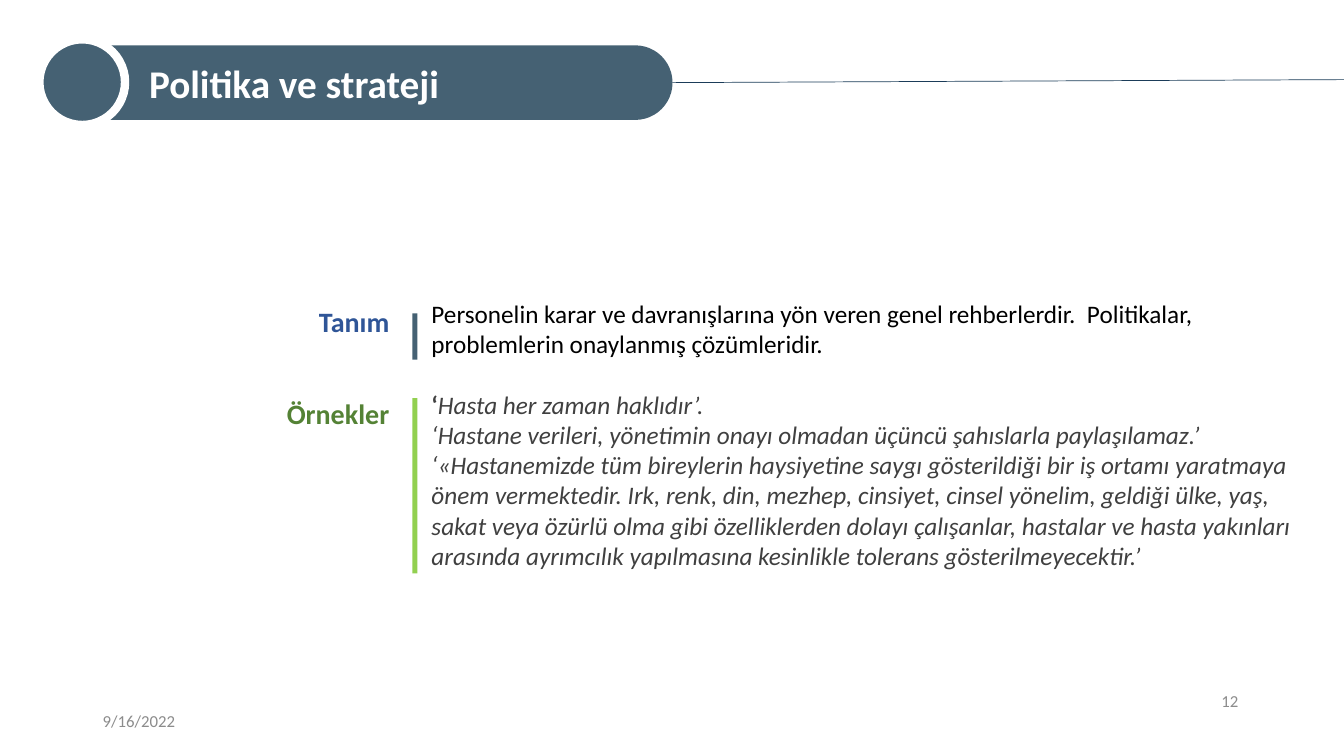
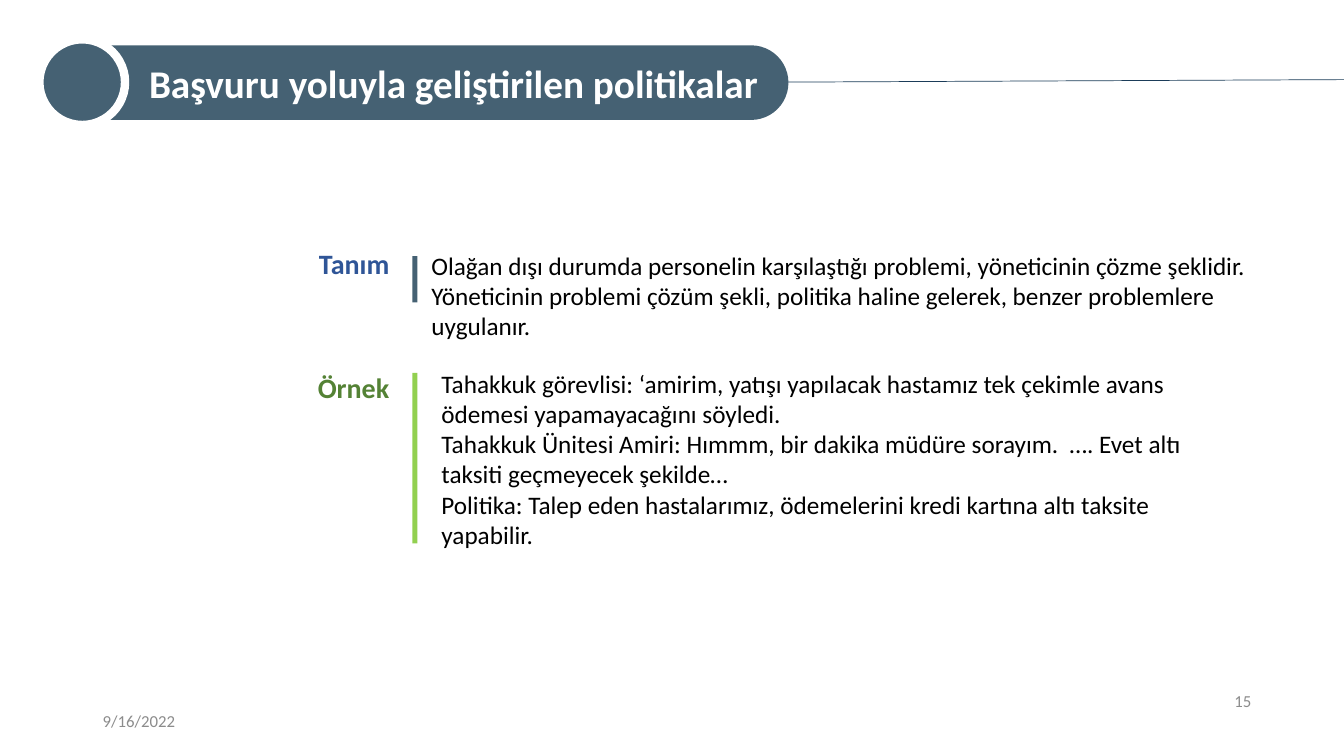
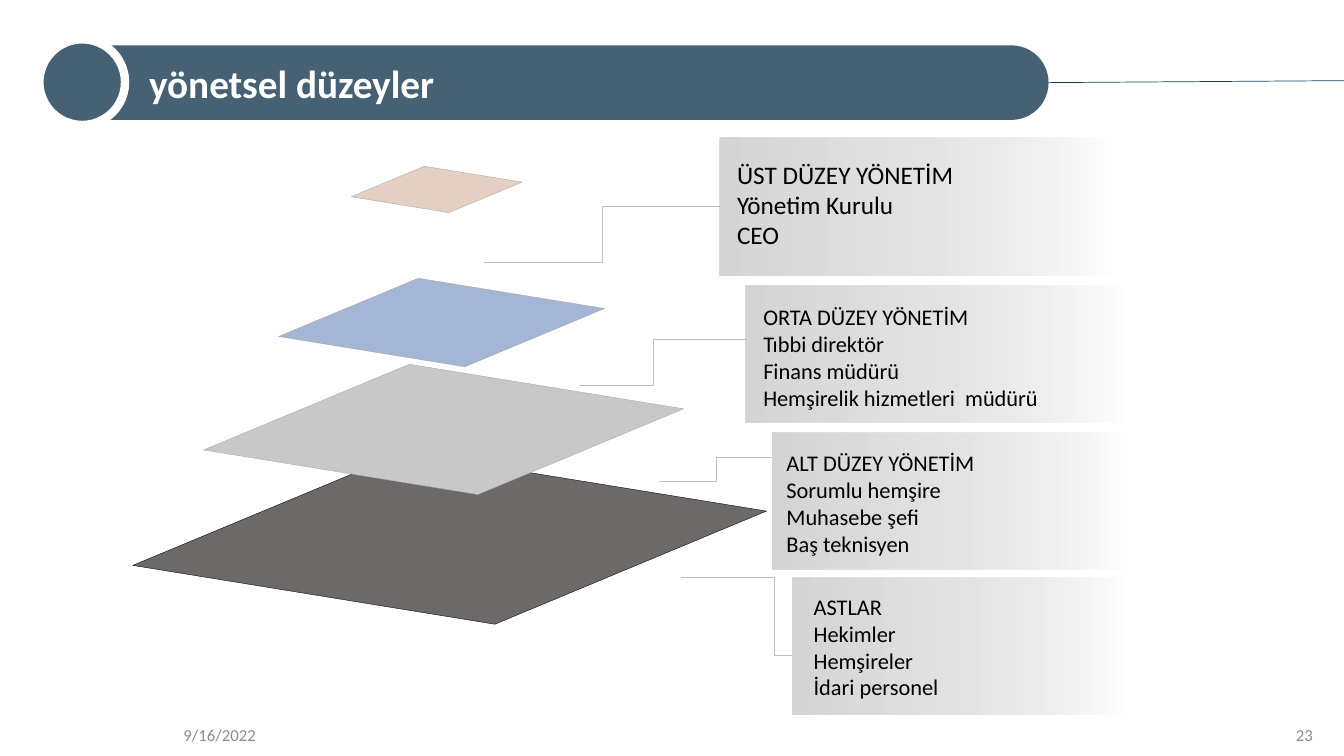
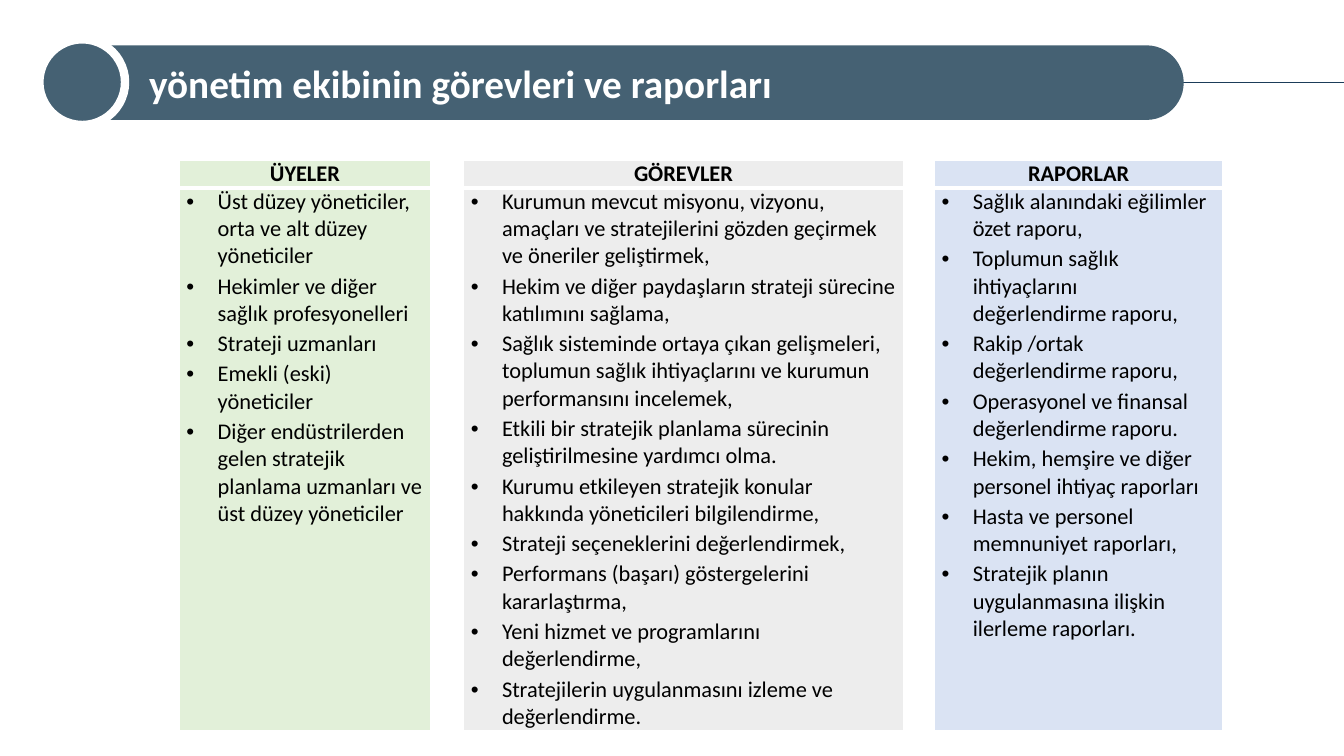
from lxml.etree import SubElement
from pptx import Presentation
from pptx.dml.color import RGBColor
from pptx.enum.shapes import MSO_CONNECTOR as LINK, MSO_SHAPE as SHAPE
from pptx.enum.text import MSO_ANCHOR as ANCHOR, PP_ALIGN as ALIGN
from pptx.oxml.ns import qn
from pptx.util import Inches, Pt

COLORS = {
    "slate": "456173", "navy": "1B3C59", "white": "FFFFFF", "black": "000000",
    "footer": "8C8C8C", "text_grey": "404040", "link": "BFBFBF",
    "blue_label": "2F5597", "green_label": "548235", "lime": "92D050",
    "top": "E4D0C3", "middle": "A5B5D5", "lower": "C8C8C8", "staff": "6D6969",
    "edge": "808080", "fade": "A6A6A6",
    "members": "E2F0D9", "duties": "EDEDED", "reports": "DAE3F3",
}


def write(frame, lines, size=18, color="black", bold=False, italic=False, align=None,
          anchor=None, inset=None, before=None, after=None, bullet=None, join=False):
    """Add lines as paragraphs; with join, continue the last paragraph."""
    frame.word_wrap = True
    if anchor is not None:
        frame.vertical_anchor = anchor
    if inset is not None:
        (frame.margin_left, frame.margin_top,
         frame.margin_right, frame.margin_bottom) = map(Inches, inset)
    for line in lines:
        para = frame.paragraphs[-1]
        if para.text and not join:
            para = frame.add_paragraph()
        if align is not None:
            para.alignment = align
        if before is not None:
            para.space_before = Pt(before)
        if after is not None:
            para.space_after = Pt(after)
        if bullet:
            props = para._p.get_or_add_pPr()
            props.set("marL", str(Inches(0.31)))
            props.set("indent", str(Inches(-0.31)))
            SubElement(props, qn("a:buFont"), typeface="Arial")
            SubElement(props, qn("a:buChar"), char=bullet)
        span = para.add_run()
        span.text = line
        span.font.name = "Calibri"
        span.font.size = Pt(size)
        span.font.bold = bold
        span.font.italic = italic
        span.font.color.rgb = RGBColor.from_string(COLORS[color])


def block(page, kind, at, fill):
    """Add a filled preset shape without line or shadow."""
    shape = page.shapes.add_shape(kind, *map(Inches, at))
    shape.shadow.inherit = False
    shape.fill.solid()
    shape.fill.fore_color.rgb = RGBColor.from_string(COLORS[fill])
    shape.line.fill.background()
    return shape


deck = Presentation()
deck.slide_width, deck.slide_height = Inches(13.33), Inches(7.5)

# Header and footer: title, bar width, rule start, rule end height,
# date position, number, number position
HEADERS = [
    ("Politika ve strateji", 6.28, 6.67, 0.79, (0.92, 6.95), "12", (9.38, 6.75)),
    ("Başvuru yoluyla geliştirilen politikalar", 7.43, 6.67, 0.79,
     (0.92, 6.95), "15", (9.51, 6.75)),
    ("yönetsel düzeyler", 10.01, 10.4, 0.8, (1.72, 7.09), "23", (10.12, 7.09)),
    ("yönetim ekibinin görevleri ve raporları", 11.35, 11.73, 0.82, None, None, None),
]
pages = []
for title, bar_width, rule_start, rule_end, date_at, number, number_at in HEADERS:
    page = deck.slides.add_slide(deck.slide_layouts[6])
    pages.append(page)
    rule = page.shapes.add_connector(LINK.STRAIGHT, Inches(rule_start), Inches(0.82),
                                     Inches(13.33), Inches(rule_end))
    rule.line.color.rgb = RGBColor.from_string(COLORS["navy"])
    rule.line.width = Pt(0.5)
    bar = block(page, SHAPE.ROUNDED_RECTANGLE, (0.39, 0.45, bar_width, 0.74), "slate")
    bar.adjustments[0] = 0.5
    write(bar.text_frame, [title], size=28, color="white", bold=True, align=ALIGN.LEFT,
          anchor=ANCHOR.MIDDLE, inset=(0.98, 0.05, 0, 0.05))
    knob = block(page, SHAPE.OVAL, (0.39, 0.39, 0.85, 0.85), "slate")
    knob.line.color.rgb = RGBColor.from_string(COLORS["white"])
    knob.line.width = Pt(6)
    if number:
        for text, place, align in (("9/16/2022", date_at, ALIGN.LEFT),
                                   (number, number_at, ALIGN.RIGHT)):
            box = page.shapes.add_textbox(*map(Inches, (*place, 3, 0.4)))
            write(box.text_frame, [text], size=12, color="footer", align=align,
                  anchor=ANCHOR.MIDDLE)
policy, requests, levels, team = pages

# Definition and example labels with their upright bars
LABELS = [
    (policy, "Tanım", 2.97, "blue_label", 3.11, 0.46, "slate"),
    (policy, "Örnekler", 3.88, "green_label", 3.95, 1.74, "lime"),
    (requests, "Tanım", 2.4, "blue_label", 2.54, 0.46, "slate"),
    (requests, "Örnek", 3.63, "green_label", 3.7, 1.69, "lime"),
]
for page, label, label_top, label_color, bar_top, bar_height, bar_color in LABELS:
    box = page.shapes.add_textbox(*map(Inches, (2.74, label_top, 1.22, 0.44)))
    write(box.text_frame, [label], size=20, color=label_color, bold=True, align=ALIGN.RIGHT)
    block(page, SHAPE.RECTANGLE, (4.09, bar_top, 0.05, bar_height), bar_color)

# Slide 1: policy and strategy
frame = policy.shapes.add_textbox(*map(Inches, (4.28, 2.96, 8.7, 2.73))).text_frame
write(frame, ["Personelin karar ve davranışlarına yön veren genel rehberlerdir.  Politikalar, "
              "problemlerin onaylanmış çözümleridir."], inset=(0, 0, 0, 0))
write(frame, ["‘"], color="text_grey", bold=True, before=21.6)
write(frame, ["Hasta her zaman haklıdır’."], color="text_grey", italic=True, join=True)
write(frame, [
    "‘Hastane verileri, yönetimin onayı olmadan üçüncü şahıslarla paylaşılamaz.’",
    "‘«Hastanemizde tüm bireylerin haysiyetine saygı gösterildiği bir iş ortamı yaratmaya "
    "önem vermektedir. Irk, renk, din, mezhep, cinsiyet, cinsel yönelim, geldiği ülke, yaş, "
    "sakat veya özürlü olma gibi özelliklerden dolayı çalışanlar, hastalar ve hasta yakınları "
    "arasında ayrımcılık yapılmasına kesinlikle tolerans gösterilmeyecektir.’",
], color="text_grey", italic=True)

# Slide 2: policies developed on request
box = requests.shapes.add_textbox(*map(Inches, (4.28, 2.48, 8.47, 0.91)))
write(box.text_frame, [
    "Olağan dışı durumda personelin karşılaştığı problemi, yöneticinin çözme şeklidir.  "
    "Yöneticinin problemi çözüm şekli, politika haline gelerek, benzer problemlere uygulanır.",
], inset=(0, 0, 0, 0))
box = requests.shapes.add_textbox(*map(Inches, (4.28, 3.6, 7.91, 2.22)))
write(box.text_frame, [
    "Tahakkuk görevlisi: ‘amirim, yatışı yapılacak hastamız tek çekimle avans ödemesi "
    "yapamayacağını söyledi.",
    "Tahakkuk Ünitesi Amiri: Hımmm, bir dakika müdüre sorayım.  …. Evet altı taksiti "
    "geçmeyecek şekilde…",
    "Politika: Talep eden hastalarımız, ödemelerini kredi kartına altı taksite yapabilir.",
])

# Slide 3: elbow links from the panels to the layers
ELBOWS = [
    ((7.14, 2.05), (4.8, 2.6), 0.5),
    ((7.4, 3.37), (5.75, 3.82), 0.56),
    ((7.66, 4.54), (6.54, 4.78), 0.5),
    ((7.86, 6.5), (6.75, 5.73), 0.16),
]
for start, end, bend in ELBOWS:
    elbow = levels.shapes.add_connector(LINK.ELBOW, *map(Inches, (*start, *end)))
    elbow.line.color.rgb = RGBColor.from_string(COLORS["link"])
    elbow.line.width = Pt(0.5)
    guides = elbow._element.spPr.find(qn("a:prstGeom")).get_or_add_avLst()
    SubElement(guides, qn("a:gd"), name="adj1", fmla=f"val {round(bend * 100000)}")

# Layers: one tilted square, scaled by its side about its centre
TILT = [(-0.7, 0.06), (-0.1, -0.19), (0.7, -0.06), (0.1, 0.19)]
LAYERS = [
    (4.46, 5.34, 4.49, "staff", "black"),
    (4.4, 4.26, 3.4, "lower", "fade"),
    (4.38, 3.2, 2.31, "middle", "fade"),
    (4.33, 1.88, 1.21, "top", "fade"),
]
for center_x, center_y, side, fill, edge in LAYERS:
    corners = [(Inches(center_x + dx * side), Inches(center_y + dy * side)) for dx, dy in TILT]
    outline = levels.shapes.build_freeform(*corners[0])
    outline.add_line_segments(corners[1:], close=True)
    layer = outline.convert_to_shape()
    layer.shadow.inherit = False
    layer.fill.solid()
    layer.fill.fore_color.rgb = RGBColor.from_string(COLORS[fill])
    layer.line.color.rgb = RGBColor.from_string(COLORS[edge])
    layer.line.width = Pt(0.25)

# Panels that fade out to the right: panel place, text place, size, lines
PANELS = [
    ((7.14, 1.37, 3.91), (7.16, 1.48, 3.51, 1.1), 18,
     ["ÜST DÜZEY YÖNETİM", "Yönetim Kurulu", "CEO"]),
    ((7.4, 2.83, 3.76), (7.42, 2.99, 3.22, 1.1), 16,
     ["ORTA DÜZEY YÖNETİM", "Tıbbi direktör", "Finans müdürü",
      "Hemşirelik hizmetleri  müdürü"]),
    ((7.66, 4.29, 3.52), (7.65, 4.44, 3.28, 1.1), 16,
     ["ALT DÜZEY YÖNETİM", "Sorumlu hemşire", "Muhasebe şefi", "Baş teknisyen"]),
    ((7.86, 5.73, 3.31), (7.92, 5.94, 3.1, 0.95), 16,
     ["ASTLAR", "Hekimler", "Hemşireler", "İdari personel"]),
]
STOPS = [(0, "edge", 34), (56, "fade", 29), (100, "edge", 0)]
for panel_at, text_at, size, lines in PANELS:
    panel = block(levels, SHAPE.RECTANGLE, (*panel_at, 1.36), "edge")
    panel.fill.gradient()
    panel.fill.gradient_angle = 0
    stops = panel._element.spPr.find(qn("a:gradFill")).find(qn("a:gsLst"))
    for old in list(stops):
        stops.remove(old)
    for position, color, opacity in STOPS:
        stop = SubElement(stops, qn("a:gs"), pos=str(position * 1000))
        tint = SubElement(stop, qn("a:srgbClr"), val=COLORS[color])
        SubElement(tint, qn("a:alpha"), val=str(opacity * 1000))
    box = levels.shapes.add_textbox(*map(Inches, text_at))
    write(box.text_frame, lines, size=size, anchor=ANCHOR.MIDDLE,
          inset=(0.15, 0.05, 0.15, 0.05))

# Slide 4: table of members, duties and reports, with white spacer columns
COLUMNS = [
    (2.49, "members", "ÜYELER", [
        "Üst düzey yöneticiler, orta ve alt düzey yöneticiler",
        "Hekimler ve diğer sağlık profesyonelleri",
        "Strateji uzmanları",
        "Emekli (eski) yöneticiler",
        "Diğer endüstrilerden gelen stratejik planlama uzmanları ve üst düzey yöneticiler",
    ]),
    (0.33, "white", None, []),
    (4.36, "duties", "GÖREVLER", [
        "Kurumun mevcut misyonu, vizyonu, amaçları ve stratejilerini gözden geçirmek ve "
        "öneriler geliştirmek,",
        "Hekim ve diğer paydaşların strateji sürecine katılımını sağlama,",
        "Sağlık sisteminde ortaya çıkan gelişmeleri, toplumun sağlık ihtiyaçlarını ve kurumun "
        "performansını incelemek,",
        "Etkili bir stratejik planlama sürecinin geliştirilmesine yardımcı olma.",
        "Kurumu etkileyen stratejik konular hakkında yöneticileri bilgilendirme,",
        "Strateji seçeneklerini değerlendirmek,",
        "Performans (başarı) göstergelerini kararlaştırma,",
        "Yeni hizmet ve programlarını değerlendirme,",
        "Stratejilerin uygulanmasını izleme ve değerlendirme.",
    ]),
    (0.31, "white", None, []),
    (2.86, "reports", "RAPORLAR", [
        "Sağlık alanındaki eğilimler özet raporu,",
        "Toplumun sağlık ihtiyaçlarını değerlendirme raporu,",
        "Rakip /ortak değerlendirme raporu,",
        "Operasyonel ve finansal değerlendirme raporu.",
        "Hekim, hemşire ve diğer personel ihtiyaç raporları",
        "Hasta ve personel memnuniyet raporları,",
        "Stratejik planın uygulanmasına ilişkin ilerleme raporları.",
    ]),
]
table = team.shapes.add_table(2, len(COLUMNS), *map(Inches, (1.78, 1.59, 10.35, 5.64))).table
table.first_row = table.horz_banding = False
table.rows[0].height, table.rows[1].height = Inches(0.27), Inches(5.37)
for index, (width, fill, heading, items) in enumerate(COLUMNS):
    table.columns[index].width = Inches(width)
    for row in range(2):
        cell = table.cell(row, index)
        cell.margin_left = cell.margin_right = Inches(0.07)
        cell.margin_top = cell.margin_bottom = 0
        for side in ("L", "R", "T", "B"):
            heavy = (row, side) in ((0, "B"), (1, "T"))
            border = SubElement(cell._tc.get_or_add_tcPr(), qn(f"a:ln{side}"),
                                w=str(Pt(3 if heavy else 1)))
            paint = SubElement(border, qn("a:solidFill"))
            SubElement(paint, qn("a:srgbClr"), val=COLORS["white"])
        cell.fill.solid()
        cell.fill.fore_color.rgb = RGBColor.from_string(COLORS[fill])
        if not heading:
            SubElement(cell.text_frame.paragraphs[0]._p, qn("a:endParaRPr"), sz="1200")
    if heading:
        write(table.cell(0, index).text_frame, [heading], size=16, bold=True,
              align=ALIGN.CENTER, before=2, after=2)
        write(table.cell(1, index).text_frame, items, size=16, after=2, bullet="•")

# Connectors carry a theme shadow until it is switched off
for page in pages:
    for line in page.element.iter(qn("p:cxnSp")):
        SubElement(line.spPr, qn("a:effectLst"))

deck.save("out.pptx")
